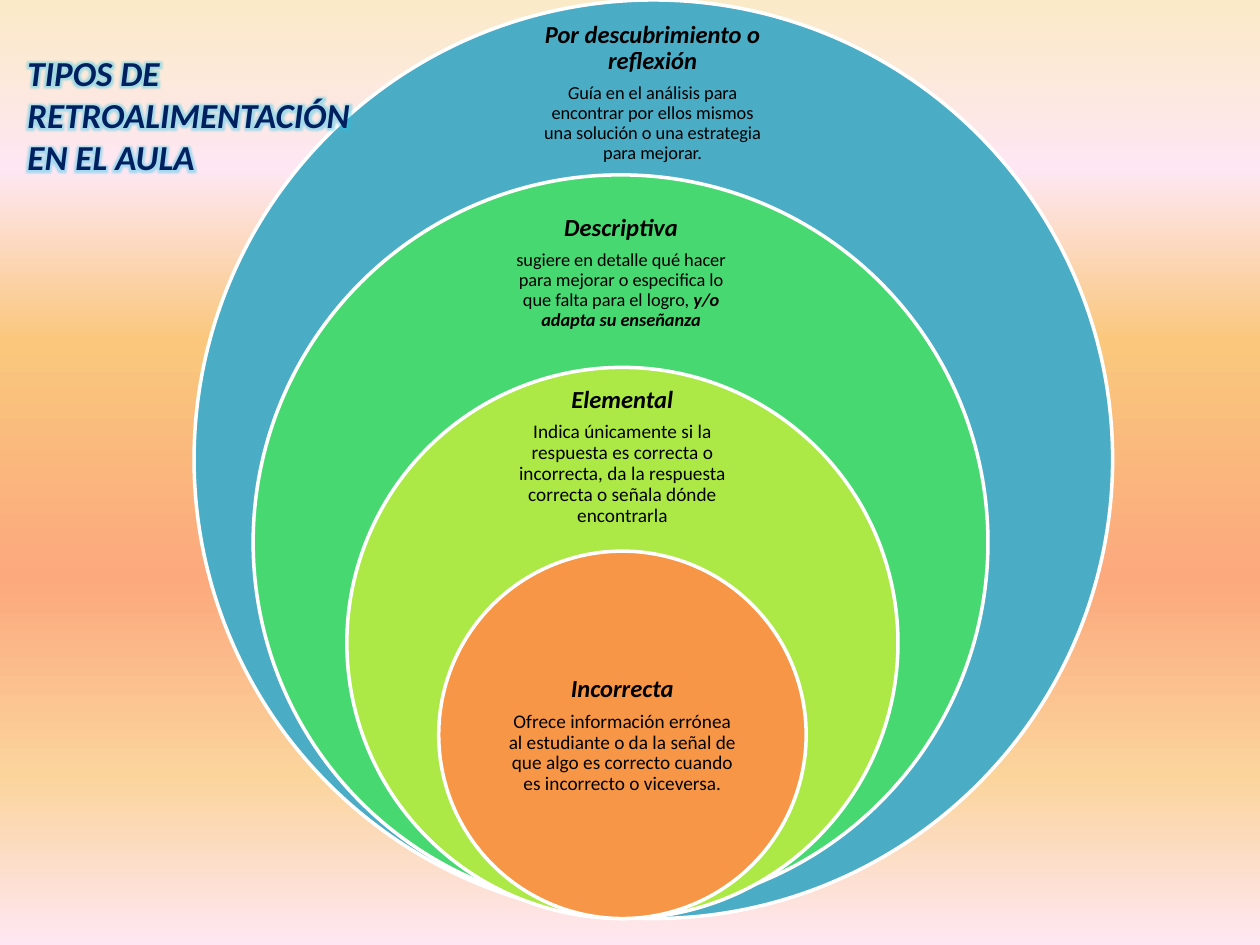
from lxml import etree
from pptx import Presentation
from pptx.dml.color import RGBColor
from pptx.enum.shapes import MSO_SHAPE as Shape
from pptx.enum.text import MSO_ANCHOR as Anchor, PP_ALIGN as Align
from pptx.oxml import parse_xml
from pptx.oxml.ns import nsdecls, qn
from pptx.util import Inches, Pt

COLUMNS, ROWS = 100, 75
BLACK = RGBColor(0x00, 0x00, 0x00)
WHITE = RGBColor(0xFF, 0xFF, 0xFF)
NAVY = RGBColor(0x00, 0x20, 0x60)
CYAN = RGBColor(0x21, 0xC5, 0xEE)
TEAL = RGBColor(0x4B, 0xAC, 0xC6)
GREEN = RGBColor(0x47, 0xD8, 0x72)
LIME = RGBColor(0xAC, 0xE9, 0x46)
ORANGE = RGBColor(0xF7, 0x96, 0x46)
CREAM = RGBColor(0xFB, 0xEA, 0xC7)
PINK = RGBColor(0xFE, 0xE7, 0xF2)
AMBER = RGBColor(0xFA, 0xC7, 0x7D)
SALMON = RGBColor(0xFB, 0xA9, 0x7D)
SAND = RGBColor(0xFB, 0xD4, 0x9C)

BACKGROUND = [(0, CREAM), (18, PINK), (36, AMBER), (61, SALMON), (82, SAND), (100, PINK)]
STRONG = {"bold": True, "italic": True}
PLAIN = {"bold": False, "italic": False}
OUTER_DIAMETER = 72.9

LEVELS = [
    {
        "fill": TEAL, "share": 1, "center": 51.85, "bottom": 72.9,
        "box": (41.6, 3.6, 20.4, 10.9), "lift": 3.4, "size": 10.5,
        "heading": "Por descubrimiento o reflexión",
        "body": [
            ("G", {"bold": False, "italic": True}),
            ("uía en el análisis para encontrar por ellos mismos una solución "
             "o una estrategia para mejorar.", PLAIN),
        ],
    },
    {
        "fill": GREEN, "share": 0.8, "center": 49.25, "bottom": 72.2,
        "box": (39.1, 17.4, 20.4, 10.5), "lift": 2, "size": 10.5,
        "heading": "Descriptiva",
        "body": [
            ("sugiere en detalle qué hacer para mejorar o especifica lo que "
             "falta para el logro, ", PLAIN),
            ("y/o adapta su enseñanza", STRONG),
        ],
    },
    {
        "fill": LIME, "share": 0.6, "center": 49.4, "bottom": 72.9,
        "box": (39.2, 32.5, 20.4, 9.8), "lift": 2.3, "size": 11,
        "heading": "Elemental",
        "body": [
            ("Indica únicamente si la respuesta es correcta o incorrecta, da la "
             "respuesta correcta o señala dónde encontrarla", PLAIN),
        ],
    },
    {
        "fill": ORANGE, "share": 0.4, "center": 49.4, "bottom": 72.9,
        "box": (39.1, 51.1, 20.6, 14.6), "lift": 0, "size": 11,
        "heading": "Incorrecta",
        "body": [
            ("Ofrece información errónea al estudiante o da la señal de que algo "
             "es correcto cuando es incorrecto o viceversa.", PLAIN),
        ],
    },
]


def apply(target, values):
    for name, value in values.items():
        setattr(target, name, value)


class SlideBuilder:
    font_name = "Calibri"
    margin = 1.1

    def __init__(self, presentation):
        self.column = presentation.slide_width / COLUMNS
        self.row = presentation.slide_height / ROWS
        self.slide = presentation.slides.add_slide(presentation.slide_layouts[6])

    def place(self, left, top, width, height):
        return (round(left * self.column), round(top * self.row),
                round(width * self.column), round(height * self.row))

    def background(self, stops):
        fill = self.slide.background.fill
        fill.gradient()
        gradient = self.slide.background._cSld.find(".//" + qn("a:gradFill"))
        stop_list = gradient.find(qn("a:gsLst"))
        for stop in list(stop_list):
            stop_list.remove(stop)
        for position, color in stops:
            stop = etree.SubElement(stop_list, qn("a:gs"), pos=str(position * 1000))
            etree.SubElement(stop, qn("a:srgbClr"), val=str(color))
        apply(fill, {"gradient_angle": 270})

    def circle(self, center, bottom, diameter, color):
        area = self.place(center - diameter / 2, bottom - diameter, diameter, diameter)
        shape = self.slide.shapes.add_shape(Shape.OVAL, *area)
        shape.shadow.inherit = False
        shape.fill.solid()
        shape.fill.fore_color.rgb = color
        shape.line.color.rgb = WHITE
        shape.line.width = Pt(2)

    def run(self, paragraph, text, size, color, style):
        run = paragraph.add_run()
        run.text = text
        apply(run.font, {"name": self.font_name, "size": Pt(size), **style})
        run.font.color.rgb = color
        return run

    def text_box(self, area):
        frame = self.slide.shapes.add_textbox(*self.place(*area)).text_frame
        frame.word_wrap = True
        return frame

    def level_text(self, area, lift, heading, body, size):
        frame = self.text_box(area)
        margin = round(self.margin * self.column)
        apply(frame, {
            "vertical_anchor": Anchor.MIDDLE,
            "margin_left": margin, "margin_right": margin, "margin_top": margin,
            "margin_bottom": margin + round(lift * self.row),
        })
        title, description = frame.paragraphs[0], frame.add_paragraph()
        for paragraph in (title, description):
            apply(paragraph, {"alignment": Align.CENTER, "line_spacing": 0.9,
                              "space_after": Pt(4.9)})
        self.run(title, heading, 14, BLACK, STRONG)
        for text, style in body:
            self.run(description, text, size, BLACK, style)

    def glowing_title(self, area, text):
        paragraph = self.text_box(area).paragraphs[0]
        run = self.run(paragraph, text, 20, NAVY, STRONG)
        properties = run.font._element
        properties.insert(0, parse_xml(
            f'<a:ln {nsdecls("a")} w="9000"><a:solidFill>'
            f'<a:srgbClr val="{NAVY}"/></a:solidFill></a:ln>'))
        properties.find(qn("a:solidFill")).addnext(parse_xml(
            f'<a:effectLst {nsdecls("a")}><a:glow rad="101600">'
            f'<a:srgbClr val="{CYAN}"><a:alpha val="40000"/></a:srgbClr>'
            f'</a:glow></a:effectLst>'))


def main():
    presentation = Presentation()
    apply(presentation, {"slide_width": Inches(10), "slide_height": Inches(7.5)})
    builder = SlideBuilder(presentation)
    builder.background(BACKGROUND)
    for level in LEVELS:
        builder.circle(level["center"], level["bottom"],
                       OUTER_DIAMETER * level["share"], level["fill"])
        builder.level_text(level["box"], level["lift"], level["heading"],
                           level["body"], level["size"])
    builder.glowing_title((1.2, 3.6, 28.3, 14.5), "TIPOS DE RETROALIMENTACIÓN EN EL AULA")
    presentation.save("out.pptx")


if __name__ == "__main__":
    main()
